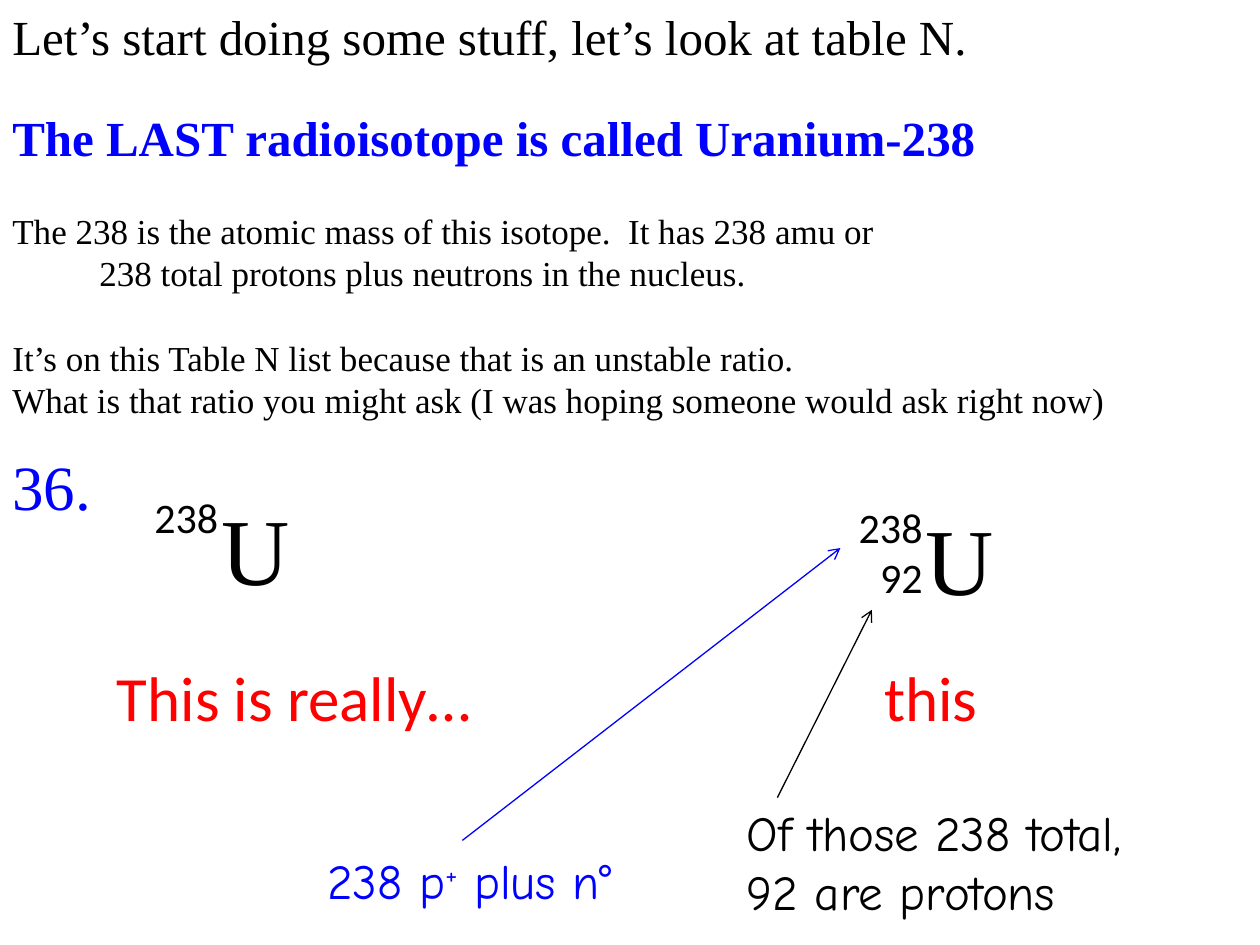
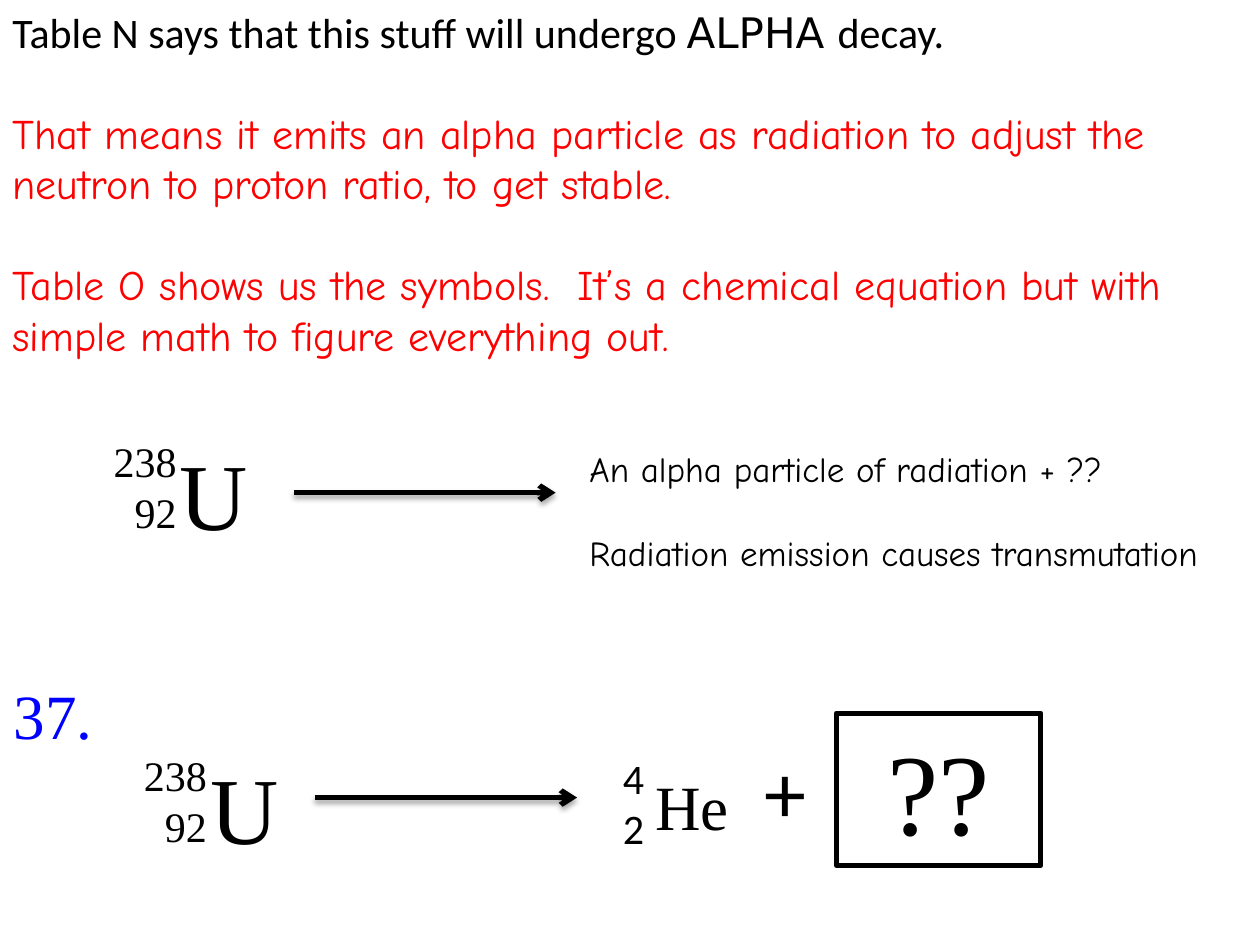
from lxml import etree
from pptx import Presentation
from pptx.dml.color import RGBColor
from pptx.enum.shapes import MSO_CONNECTOR as CONN, MSO_SHAPE as SHAPE
from pptx.enum.text import PP_ALIGN as ALIGN
from pptx.oxml.ns import qn
from pptx.util import Inches, Pt

BLACK, BLUE, RED = "000000", "0000FF", "FF0000"
SERIF, SANS, COMIC = "Times New Roman", "Calibri", "Comic Neue"
rgb = RGBColor.from_string


def add_text(s, box, lines, size, font, color=BLACK, align=ALIGN.LEFT, shape=None):
    sp = shape or s.shapes.add_textbox(*[Inches(v) for v in box])
    tf = sp.text_frame
    tf.word_wrap = True
    for i, line in enumerate(lines):
        p = tf.add_paragraph() if i else tf.paragraphs[0]
        p.alignment = align
        for part in [line] if isinstance(line, str) else line:
            r = p.add_run()
            r.text = part
            r.font.size = Pt(size)
            r.font.name = font
            r.font.color.rgb = rgb(color)
    return tf.paragraphs


def add_arrow(s, x1, y1, x2, y2, color, width, shadow=False):
    ln = s.shapes.add_connector(CONN.STRAIGHT, Inches(x1), Inches(y1), Inches(x2), Inches(y2))
    ln.line.color.rgb = rgb(color)
    ln.line.width = Pt(width)
    etree.SubElement(ln.line._get_or_add_ln(), qn("a:tailEnd"), type="arrow")
    effects = etree.SubElement(ln._element.spPr, qn("a:effectLst"))
    if shadow:
        outer = etree.SubElement(effects, qn("a:outerShdw"), blurRad=str(Pt(3.1)),
                                 dist=str(Pt(1.8)), dir="5400000", rotWithShape="0")
        clr = etree.SubElement(outer, qn("a:srgbClr"), val=BLACK)
        etree.SubElement(clr, qn("a:alpha"), val="35000")


prs = Presentation()
prs.slide_width, prs.slide_height = Inches(10), Inches(7.5)
s1, s2 = [prs.slides.add_slide(prs.slide_layouts[6]) for _ in range(2)]

for s, x, y, number in [(s1, 0, 3.5, "36."), (s2, 0.01, 5.32, "37.")]:
    add_text(s, (x, y, 0.83, 0.71), [number], 36, SERIF, BLUE)

for s, x, y, numbers, font in [
    (s1, 0.58, 3.85, ["238"], SANS),
    (s1, 6.17, 3.93, ["238", "92"], SANS),
    (s2, 0.25, 3.41, ["238", "92"], SERIF),
    (s2, 0.49, 5.9, ["238", "92"], SERIF),
]:
    add_text(s, (x, y, 1.25, 0.91), numbers, 24, font, align=ALIGN.RIGHT)
    add_text(s, (x + 1.08, y, 1.33, 1.01), ["U"], 54, SERIF)

ps = add_text(s1, (0, 0, 10, 4.07), [
    "Let’s start doing some stuff, let’s look at table N.",
    "The LAST radioisotope is called Uranium-238",
    "The 238 is the atomic mass of this isotope.  It has 238 amu or",
    "238 total protons plus neutrons in the nucleus.",
    "It’s on this Table N list because that is an unstable ratio.",
    "What is that ratio you might ask (I was hoping someone would ask right now)",
], 20, SERIF)
for p in ps[:2]:
    p.runs[0].font.size = Pt(28)
ps[1].runs[0].font.bold = True
ps[1].runs[0].font.color.rgb = rgb(BLUE)
for i in (1, 2, 4):
    ps[i].space_before = Pt(24.4)
ps[3]._p.get_or_add_pPr().set("marL", str(Inches(0.69)))

for x, w, words in [(0.83, 4, "This is really…"), (6.92, 1.66, "this")]:
    add_text(s1, (x, 5.18, w, 0.71), [words], 36, SANS, RED)
add_arrow(s1, 3.67, 6.67, 6.67, 4.35, BLUE, 0.75)
add_arrow(s1, 6.17, 6.33, 6.92, 4.84, BLACK, 0.75)
ps = add_text(s1, (2.5, 6.7, 2.67, 0.57), [["238 p", "+", " plus n°"]], 28, COMIC, BLUE)
ps[0].runs[1].font._element.set("baseline", "30000")
add_text(s1, (5.83, 6.32, 3.83, 1.04), ["Of those 238 total,", "92 are protons"], 28, COMIC)

ps = add_text(s2, (0, 0, 10, 2.93), [
    ["Table N says that this stuff will undergo ", "ALPHA ", "decay."],
    "That means it emits an alpha particle as radiation to adjust the "
    "neutron to proton ratio, to get stable.",
    "Table O shows us the symbols.  It’s a chemical equation but with "
    "simple math to figure everything out.",
], 24, COMIC, RED)
for r, font in zip(ps[0].runs, (SANS, "DejaVu Sans", SANS)):
    r.font.name = font
    r.font.color.rgb = rgb(BLACK)
for p in ps[1:]:
    p.space_before = Pt(29)

for x, y in [(2.33, 3.91), (2.5, 6.33)]:
    add_arrow(s2, x, y, x + 2.08, y, BLACK, 3, shadow=True)
ps = add_text(s2, (4.58, 3.5, 5.42, 1.11), [
    "An alpha particle of radiation + ??",
    "Radiation emission causes transmutation",
], 20, COMIC)
ps[1].space_before = Pt(24)

add_text(s2, (4.67, 5.92, 0.54, 0.91), ["4", "2"], 24, SANS, align=ALIGN.RIGHT)
add_text(s2, (5.1, 6.04, 1.21, 0.71), ["He"], 36, SERIF)
add_text(s2, (5.97, 5.82, 0.83, 0.91), ["+"], 48, SANS)
box = s2.shapes.add_shape(SHAPE.RECTANGLE, Inches(6.64), Inches(5.66), Inches(1.62), Inches(1.21))
box.shadow.inherit = False
box.fill.background()
box.line.color.rgb = rgb(BLACK)
box.line.width = Pt(3)
add_text(s2, None, ["??"], 66, SERIF, align=ALIGN.CENTER, shape=box)

prs.save("out.pptx")
